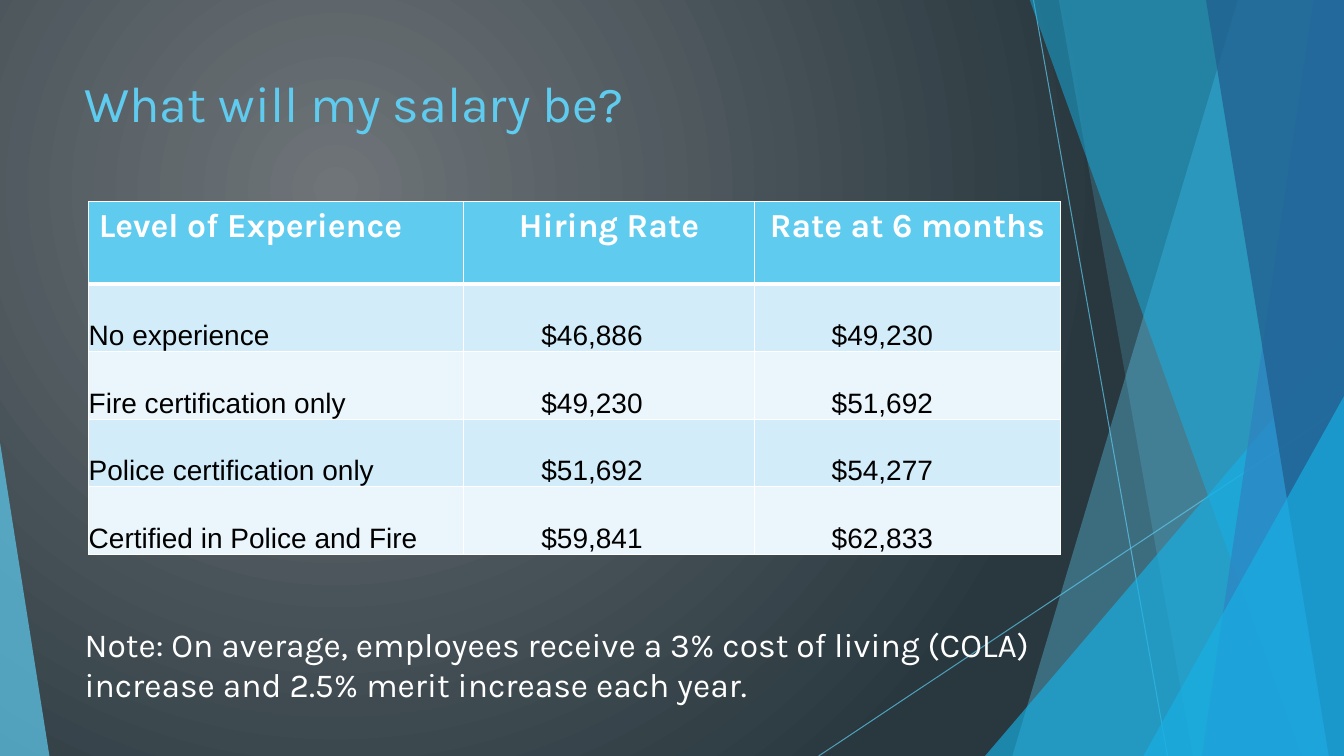
from lxml import etree
from pptx import Presentation
from pptx import util as u
from pptx.dml import color
from pptx.enum import shapes, text
from pptx.oxml import ns

PX = 9144
WIDTH, HEIGHT = 1333, 750
SKY, AQUA, BLUE, NAVY = "5FCBEF", "17B0E4", "2E83C3", "226292"
WHITE, BLACK = "FFFFFF", "000000"
BANDS = ("D2ECF9", "EAF6FC")

SALARIES = [
    ("Level of Experience", "Hiring Rate", "Rate at 6 months"),
    ("No experience", "$46,886", "$49,230"),
    ("Fire certification only", "$49,230", "$51,692"),
    ("Police certification only", "$51,692", "$54,277"),
    ("Certified in Police and Fire", "$59,841", "$62,833"),
]


def px(*lengths):
    return [u.Emu(length * PX) for length in lengths]


def paint(fill, hex_color):
    fill.solid()
    fill.fore_color.rgb = color.RGBColor.from_string(hex_color)


def sub(parent, tag, **attributes):
    return etree.SubElement(parent, ns.qn(tag), attributes)


def fade(shape, percent):
    for tint in shape._element.spPr.iter(ns.qn("a:srgbClr")):
        sub(tint, "a:alpha", val=str(percent * 1000))


def style(paragraph, words, size, typeface, hex_color, bold=False):
    paragraph.text = words
    font = paragraph.font
    font.size, font.name, font.bold = u.Pt(size), typeface, bold
    paint(font.fill, hex_color)


def add_background(slide):
    fill = slide.background.fill
    fill.gradient()
    for stop, hex_color in zip(fill.gradient_stops, ("6E7478", "29383F")):
        stop.color.rgb = color.RGBColor.from_string(hex_color)
    gradient = next(slide._element.iter(ns.qn("a:gradFill")))
    gradient.remove(gradient.find(ns.qn("a:lin")))
    glow = sub(gradient, "a:path", path="circle")
    sub(glow, "a:fillToRect", l="50000", t="50000", r="100000", b="100000")


def finish_facet(facet, hex_color, opacity):
    facet.shadow.inherit = False
    paint(facet.fill, hex_color)
    facet.line.fill.background()
    fade(facet, opacity)


def add_ray(slide, start, end):
    ray = slide.shapes.add_connector(
        shapes.MSO_CONNECTOR.STRAIGHT, *px(*start, *end))
    paint(ray.line.fill, SKY)
    ray.line.width = u.Pt(0.75)
    fade(ray, 70)
    sub(ray._element.spPr, "a:effectLst")


def add_panel(slide, top_left, bottom_left, hex_color, opacity):
    outline = slide.shapes.build_freeform(top_left, -1, scale=PX)
    outline.add_line_segments(
        [(WIDTH, -1), (WIDTH, HEIGHT), (bottom_left, HEIGHT)])
    finish_facet(outline.convert_to_shape(), hex_color, opacity)


def add_corner(slide, left, top, right, apex, hex_color, opacity):
    corner = slide.shapes.add_shape(
        shapes.MSO_SHAPE.ISOSCELES_TRIANGLE,
        *px(left, top, right - left, HEIGHT - top))
    corner.adjustments[0] = apex
    finish_facet(corner, hex_color, opacity)


def add_facets(slide):
    add_ray(slide, (1025, 0), (1158, HEIGHT))
    add_ray(slide, (WIDTH, 403), (812, HEIGHT))
    add_panel(slide, 1228, 1004, SKY, 36)
    add_panel(slide, 1050, 1183, SKY, 20)
    add_corner(slide, 977, 333, WIDTH, 1, AQUA, 66)
    add_panel(slide, 1021, 1291, AQUA, 50)
    add_panel(slide, 1303, 1192, BLUE, 70)
    add_panel(slide, 1196, 1318, NAVY, 80)
    add_corner(slide, 1134, 393, WIDTH, 1, AQUA, 66)
    add_corner(slide, 0, 439, 49, 0, SKY, 70)


def add_words(slide, box, words, size, hex_color):
    frame = slide.shapes.add_textbox(*px(*box)).text_frame
    frame.word_wrap = True
    style(frame.paragraphs[0], words, size, "Karla", hex_color)
    return frame


def add_borders(cell, top, bottom):
    properties = cell._tc.get_or_add_tcPr()
    widths = {"a:lnL": 1, "a:lnR": 1, "a:lnT": top, "a:lnB": bottom}
    for position, (side, width) in enumerate(widths.items()):
        border = sub(properties, side, w=str(u.Pt(width)))
        sub(sub(border, "a:solidFill"), "a:srgbClr", val=WHITE)
        properties.insert(position, border)


def fill_header(cell, words, column):
    paragraph = cell.text_frame.paragraphs[0]
    style(paragraph, words, 24, "Karla", WHITE, True)
    if column:
        paragraph.alignment = text.PP_ALIGN.CENTER
    paint(cell.fill, SKY)
    add_borders(cell, 1, 3)


def fill_body(cell, words, row, column):
    style(cell.text_frame.paragraphs[0], words, 20, "Arial", BLACK)
    cell.vertical_anchor = text.MSO_ANCHOR.BOTTOM
    cell.margin_left = px(77 if column else 0)[0]
    cell.margin_top = cell.margin_right = cell.margin_bottom = 0
    paint(cell.fill, BANDS[(row - 1) % 2])
    add_borders(cell, 3 if row == 1 else 1, 1)


def add_salary_table(slide, box):
    table = slide.shapes.add_table(
        len(SALARIES), len(SALARIES[0]), *px(*box)).table
    table.horz_banding = False
    for column, width in zip(table.columns, px(372, 288, 304)):
        column.width = width
    for row, height in zip(table.rows, px(82, 67, 67, 67, 67)):
        row.height = height
    for row, entries in enumerate(SALARIES):
        for column, words in enumerate(entries):
            cell = table.cell(row, column)
            if row:
                fill_body(cell, words, row, column)
            else:
                fill_header(cell, words, column)


def main():
    deck = Presentation()
    deck.slide_width, deck.slide_height = px(WIDTH, HEIGHT)
    slide = deck.slides.add_slide(deck.slide_layouts[6])
    add_background(slide)
    add_facets(slide)
    add_words(slide, (74, 67, 940, 144), "What will my salary be?", 36, SKY)
    add_salary_table(slide, (88, 200, 964, 350))
    note = add_words(
        slide, (74, 614, 1026, 91),
        "Note: On average, employees receive a 3% cost of living (COLA) "
        "increase and 2.5% merit increase each year.", 24, WHITE)
    note.auto_size = text.MSO_AUTO_SIZE.SHAPE_TO_FIT_TEXT
    deck.save("out.pptx")


if __name__ == "__main__":
    main()
